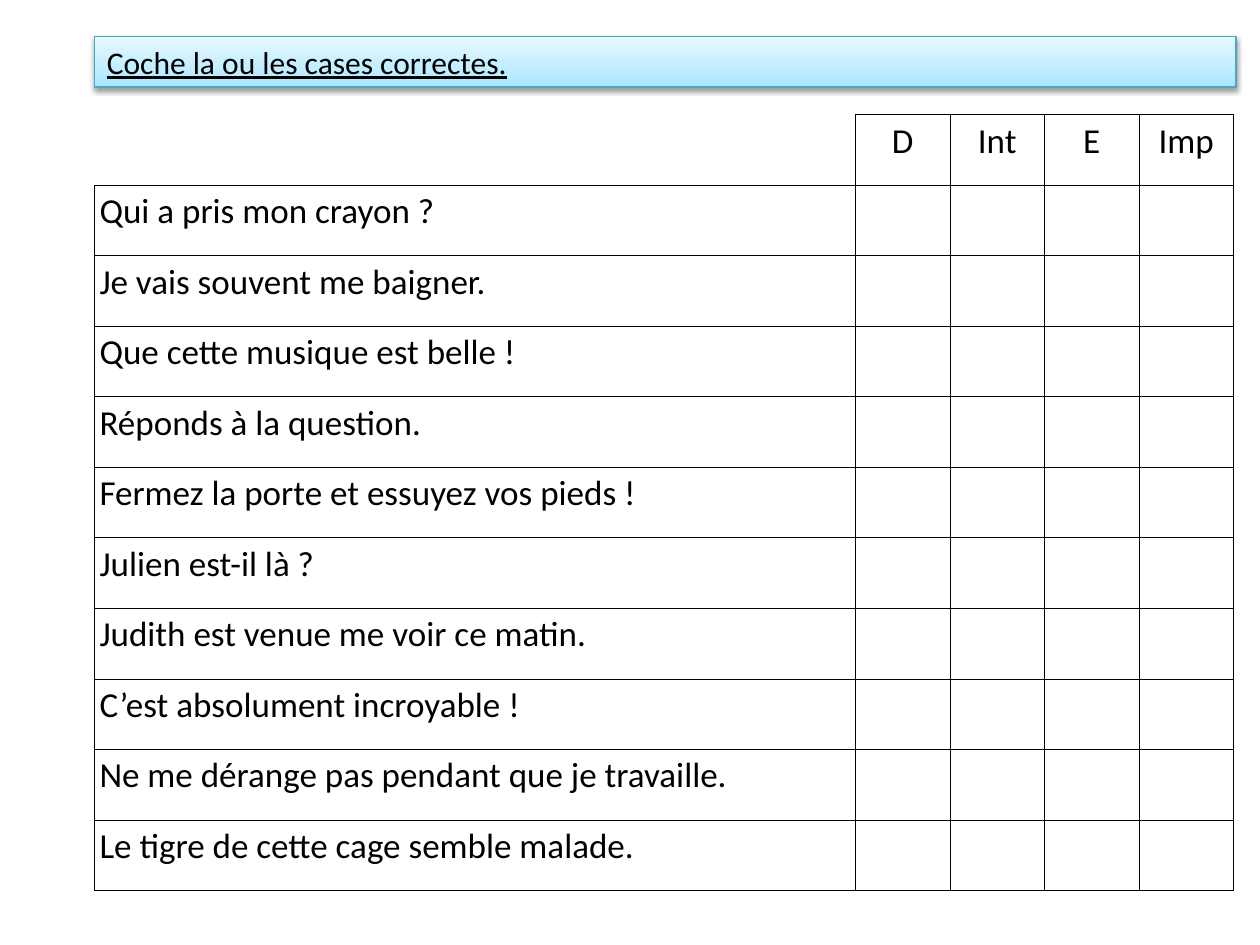
from pptx import Presentation
from pptx.dml.color import RGBColor
from pptx.enum.shapes import MSO_SHAPE
from pptx.enum.text import MSO_ANCHOR, PP_ALIGN
from pptx.oxml import parse_xml
from pptx.oxml.ns import nsdecls
from pptx.util import Inches, Pt

RECT = MSO_SHAPE.RECTANGLE
MIDDLE = MSO_ANCHOR.MIDDLE
LEFT, CENTER, JUSTIFY = PP_ALIGN.LEFT, PP_ALIGN.CENTER, PP_ALIGN.JUSTIFY

COLORS = {
    "text": "000000",
    "border": "000000",
    "shadow": "000000",
    "banner_line": "46AAC5",
    "banner_bottom": "A7E6FF",
    "banner_middle": "C1EDFF",
    "banner_top": "E7F8FF",
}
FONT = "Calibri"
HEADERS = ["D", "Int", "E", "Imp"]
SENTENCES = [
    "Qui a pris mon crayon ?",
    "Je vais souvent me baigner.",
    "Que cette musique est belle !",
    "Réponds à la question.",
    "Fermez la porte et essuyez vos pieds !",
    "Julien est-il là ?",
    "Judith est venue me voir ce matin.",
    "C’est absolument incroyable !",
    "Ne me dérange pas pendant que je travaille.",
    "Le tigre de cette cage semble malade.",
]


def add_text(tf, text, size, align, underline=None):
    p = tf.paragraphs[0]
    p.alignment = align
    r = p.add_run()
    r.text = text
    r.font.name = FONT
    r.font.size = Pt(size)
    r.font.underline = underline
    r.font.color.rgb = RGBColor.from_string(COLORS["text"])


def add_borders(cell, sides):
    """Draw thin borders on the given sides, in the order L, R, T, B."""
    tc_pr = cell._tc.get_or_add_tcPr()
    for i, side in enumerate(sides):
        tc_pr.insert(i, parse_xml(
            f'<a:ln{side} {nsdecls("a")} w="{Pt(0.5)}"><a:solidFill>'
            f'<a:srgbClr val="{COLORS["border"]}"/></a:solidFill></a:ln{side}>'))


prs = Presentation()
prs.slide_width, prs.slide_height = Inches(10), Inches(7.5)
s = prs.slides.add_slide(prs.slide_layouts[6])

# Instruction banner
left, width = Inches(0.75), Inches(9.06)
sp = s.shapes.add_shape(RECT, left, Inches(0.29), width, Inches(0.4))
sp.line.color.rgb = RGBColor.from_string(COLORS["banner_line"])
sp.line.width = Pt(0.75)
stops = [(0, "banner_bottom"), (35, "banner_middle"), (100, "banner_top")]
gs = "".join(f'<a:gs pos="{pos * 1000}"><a:srgbClr val="{COLORS[name]}"/></a:gs>'
             for pos, name in stops)
sp._element.spPr.insert(2, parse_xml(
    f'<a:gradFill {nsdecls("a")} rotWithShape="1"><a:gsLst>{gs}</a:gsLst>'
    '<a:lin ang="16200000" scaled="1"/></a:gradFill>'))
sp.shadow.inherit = False
sp._element.spPr.effectLst.append(parse_xml(
    f'<a:outerShdw {nsdecls("a")} blurRad="{Pt(3.1)}" dist="{Pt(1.6)}" '
    f'dir="5400000" rotWithShape="0"><a:srgbClr val="{COLORS["shadow"]}">'
    '<a:alpha val="38000"/></a:srgbClr></a:outerShdw>'))
tf = sp.text_frame
tf.word_wrap = True
tf.vertical_anchor = MIDDLE
add_text(tf, "Coche la ou les cases correctes.", 18, LEFT, underline=True)

# Grid of sentences and boxes to tick
rows = [["", *HEADERS]] + [[text] + [""] * len(HEADERS) for text in SENTENCES]
table = s.shapes.add_table(len(rows), len(rows[0]), left, Inches(0.91),
                           width, Inches(0.56) * len(rows)).table
table.first_row = False
table.horz_banding = False
for c, column in enumerate(table.columns):
    column.width = Inches(0.75 if c else 6.04)
for r, texts in enumerate(rows):
    table.rows[r].height = Inches(0.56)
    for c, text in enumerate(texts):
        cell = table.cell(r, c)
        cell.fill.background()
        add_borders(cell, "LRTB" if r or c else "RB")
        if text:
            cell.margin_left = cell.margin_right = Inches(0.04)
            cell.margin_top = cell.margin_bottom = Inches(0.04)
            add_text(cell.text_frame, text, 20, CENTER if c else JUSTIFY)

prs.save("out.pptx")
